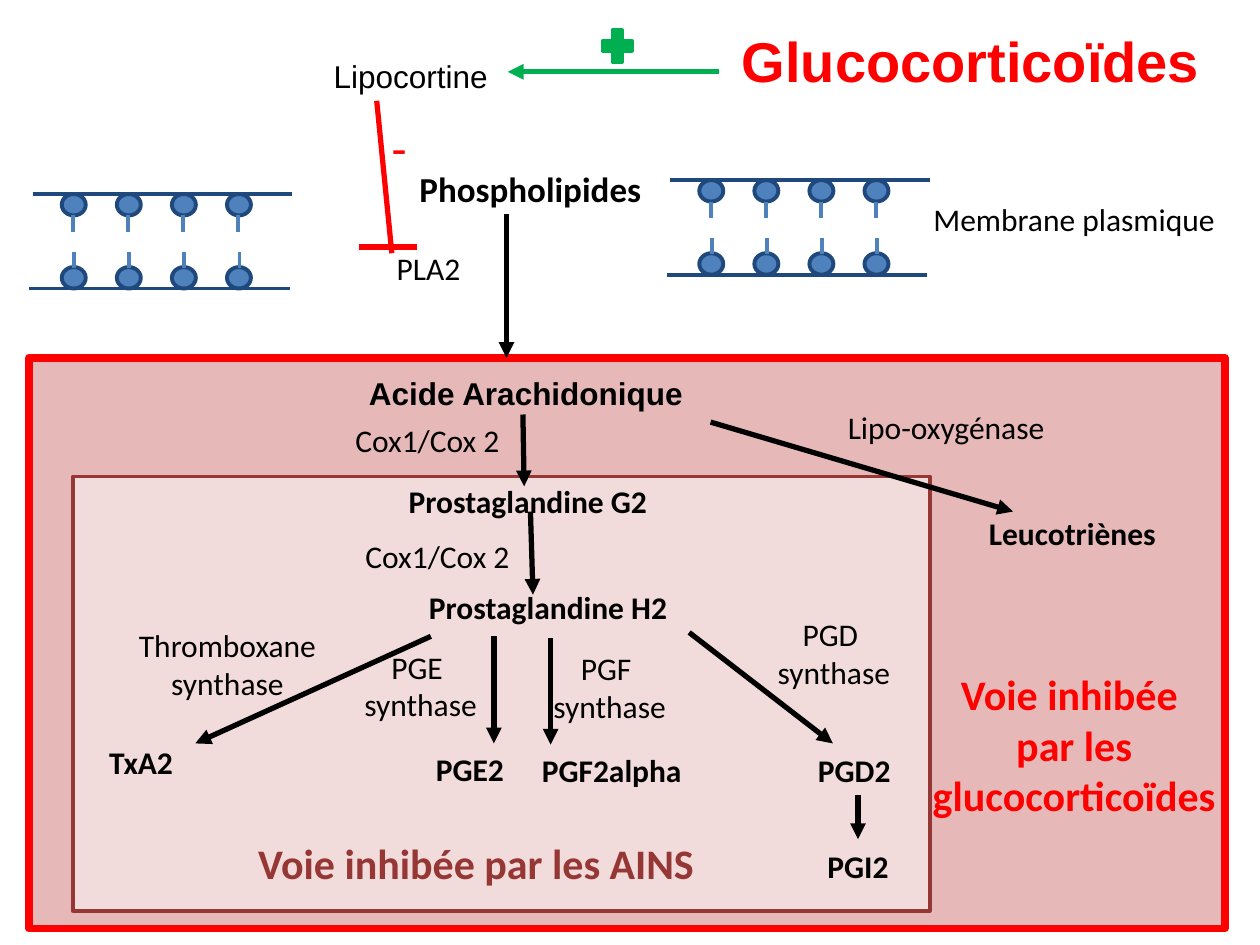
from dataclasses import dataclass

from lxml import etree
from pptx import Presentation
from pptx.dml.color import RGBColor
from pptx.enum.shapes import MSO_CONNECTOR, MSO_SHAPE
from pptx.enum.text import MSO_AUTO_SIZE, PP_ALIGN
from pptx.oxml.ns import qn
from pptx.util import Inches, Pt

STRAIGHT = MSO_CONNECTOR.STRAIGHT
RECT, OVAL, PLUS = MSO_SHAPE.RECTANGLE, MSO_SHAPE.OVAL, MSO_SHAPE.MATH_PLUS
LEFT, CENTER = PP_ALIGN.LEFT, PP_ALIGN.CENTER
FIT_TEXT = MSO_AUTO_SIZE.SHAPE_TO_FIT_TEXT


@dataclass(frozen=True)
class Theme:
    black: str = "000000"
    red: str = "FF0000"
    green: str = "00B050"
    maroon: str = "953735"
    rose: str = "E6B9B8"
    pale_rose: str = "F2DCDB"
    navy: str = "1F497D"
    blue: str = "4F81BD"
    body_font: str = "Calibri"
    accent_font: str = "Arial"
    body: int = 18
    source: int = 20
    pathway: int = 24
    sign: int = 28
    title: int = 32
    arrow: float = 3
    membrane: float = 2.25


T = Theme()

# Inhibited pathways: box, fill, line colour, line width
PATHWAYS = [
    ((0.23, 2.84, 9.49, 4.53), T.rose, T.red, 4.5),
    ((0.58, 3.78, 6.8, 3.45), T.pale_rose, T.maroon, 2),
]

# Enzymes: lines of text, box
ENZYMES = [
    (["Cox1/Cox 2 "], (2.48, 3.29, 1.88, 0.4)),
    (["Cox1/Cox 2 "], (2.64, 4.21, 1.72, 0.4)),
    (["Thromboxane synthase"], (0.64, 4.92, 2.33, 0.71)),
    (["PGE", " synthase"], (2.25, 5.09, 2.12, 0.71)),
    (["PGF", " synthase"], (4.22, 5.1, 1.18, 0.71)),
    (["PGD", " synthase"], (6, 4.83, 1.18, 0.71)),
]

# Products of the cascade: name, box
PRODUCTS = [
    ("Prostaglandine G2", (3.11, 3.78, 2.16, 0.4)),
    ("Prostaglandine H2", (3.27, 4.62, 2.16, 0.4)),
    ("TxA2", (0.49, 5.85, 1.26, 0.4)),
    ("PGE2", (3.1, 5.9, 1.26, 0.4)),
    ("PGF2alpha", (4.13, 5.91, 1.45, 0.4)),
    ("PGD2", (6.15, 5.91, 1.26, 0.4)),
    ("PGI2", (6.18, 6.67, 1.26, 0.4)),
]

# Reaction arrows: start, end
REACTIONS = [
    ((4.02, 1.7), (4.02, 2.84)),   # phospholipids to arachidonic acid
    ((5.64, 3.35), (8.04, 4.06)),  # to leukotrienes
    ((4.15, 3.29), (4.16, 3.86)),  # to G2
    ((4.21, 4.06), (4.23, 4.72)),  # to H2
    ((3.42, 5.05), (1.55, 5.9)),   # to TxA2
    ((3.92, 5.05), (3.92, 5.9)),   # to PGE2
    ((4.37, 5.06), (4.37, 5.91)),  # to PGF2alpha
    ((5.47, 5.02), (6.61, 5.9)),   # to PGD2
    ((6.81, 6.31), (6.81, 6.66)),  # to PGI2
]

# Top left head of each membrane piece, and the lipid spacing
MEMBRANES = [(0.49, 1.54), (5.55, 1.43)]
LIPIDS, PITCH = 4, 0.437
HEAD_W, HEAD_H, TAIL = 0.19, 0.17, 0.13
THICKNESS = 0.75

prs = Presentation()
prs.slide_width, prs.slide_height = Inches(10), Inches(7.5)
slide = prs.slides.add_slide(prs.slide_layouts[6])


def add_filled(preset, box, fill, line, width):
    shape = slide.shapes.add_shape(preset, *map(Inches, box))
    shape.shadow.inherit = False
    shape.fill.solid()
    shape.fill.fore_color.rgb = RGBColor.from_string(fill)
    shape.line.color.rgb = RGBColor.from_string(line)
    shape.line.width = Pt(width)


def add_line(start, end, color=T.black, width=T.arrow, arrow=False):
    connector = slide.shapes.add_connector(STRAIGHT, *map(Inches, start + end))
    connector.line.color.rgb = RGBColor.from_string(color)
    connector.line.width = Pt(width)
    properties = connector._element.spPr
    if arrow:
        etree.SubElement(properties.find(qn("a:ln")), qn("a:tailEnd"), type="triangle")
    etree.SubElement(properties, qn("a:effectLst"))


def add_label(lines, box, size=T.body, color=T.black, bold=False,
              font=T.body_font, align=LEFT, wrap=True):
    frame = slide.shapes.add_textbox(*map(Inches, box)).text_frame
    frame.word_wrap = wrap
    frame.auto_size = FIT_TEXT
    frame.text = "\n".join(lines)
    for paragraph in frame.paragraphs:
        paragraph.alignment = align
        paragraph.font.name = font
        paragraph.font.size = Pt(size)
        paragraph.font.bold = bold
        paragraph.font.color.rgb = RGBColor.from_string(color)


def add_membrane(x, y):
    bottom = y + THICKNESS
    add_line((x - 0.23, y), (x + 1.83, y), T.navy, T.membrane)
    add_line((x - 0.26, bottom), (x + 1.81, bottom), T.navy, T.membrane)
    for i in range(LIPIDS):
        left = x + i * PITCH
        # Upper tails hang from their heads, lower tails rise from theirs
        for head_top, tail_top, tail_x in (
            (y, y + HEAD_H, left + 0.09),
            (bottom - HEAD_H, bottom - HEAD_H - 0.12, left + 0.1),
        ):
            add_filled(OVAL, (left, head_top, HEAD_W, HEAD_H), T.blue, T.navy, T.membrane)
            add_line((tail_x, tail_top), (tail_x, tail_top + TAIL), T.blue, T.membrane)


# Pathway boxes and membrane
for pathway in PATHWAYS:
    add_filled(RECT, *pathway)
for corner in MEMBRANES:
    add_membrane(*corner)
add_label(["Membrane plasmique"], (7.31, 1.54, 2.46, 0.4), wrap=False)

# Arachidonic acid cascade
add_label(["Phospholipides"], (3.23, 1.28, 1.98, 0.44), T.source, bold=True, wrap=False)
add_label(["PLA2"], (3.05, 1.93, 0.74, 0.4))
add_label(["Acide Arachidonique"], (2.83, 2.92, 2.72, 0.4), bold=True,
          font=T.accent_font, wrap=False)
add_label(["Lipo-oxygénase"], (6.63, 3.19, 1.78, 0.4), wrap=False)
add_label(["Leucotriènes"], (7.75, 4.03, 1.96, 0.4), bold=True)
for lines, box in ENZYMES:
    add_label(lines, box, align=CENTER)
for name, box in PRODUCTS:
    add_label([name], box, bold=True, align=CENTER)
for start, end in REACTIONS:
    add_line(start, end, arrow=True)

# Pathway captions
add_label(["Voie inhibée ", "par les glucocorticoïdes"], (7.17, 5.26, 2.71, 1.31),
          T.pathway, T.red, bold=True, align=CENTER)
add_label(["Voie inhibée par les AINS"], (0.61, 6.6, 6.34, 0.5),
          T.pathway, T.maroon, bold=True, align=CENTER)

# Glucocorticoids stimulate lipocortin
add_label(["Glucocorticoïdes"], (5.79, 0.16, 3.86, 0.64), T.title, T.red,
          bold=True, font=T.accent_font, wrap=False)
add_line((5.71, 0.57), (4.03, 0.57), T.green, arrow=True)
add_filled(PLUS, (4.74, 0.19, 0.32, 0.35), T.green, T.green, 2)

# Lipocortin inhibits PLA2
add_label(["Lipocortine"], (2.55, 0.4, 1.44, 0.4), font=T.accent_font, wrap=False)
add_line((2.99, 0.8), (3.11, 2.01), T.red)
add_line((3.31, 1.96), (2.85, 1.96), T.red)
add_label(["-"], (3.01, 0.88, 0.45, 0.57), T.sign, T.red)

prs.save("out.pptx")
